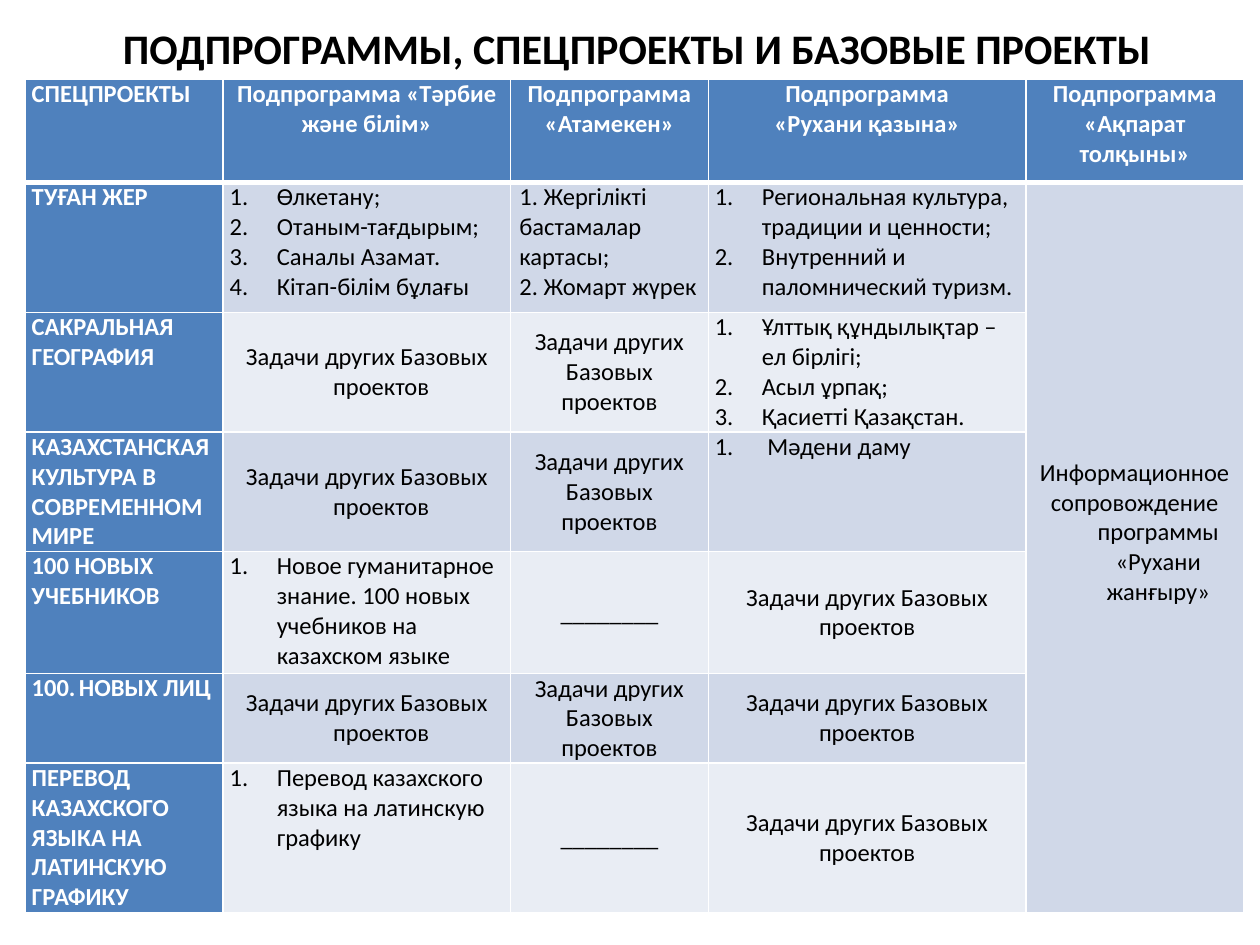
from dataclasses import dataclass

from lxml import etree
from pptx import Presentation
from pptx.dml.color import RGBColor
from pptx.enum.text import MSO_ANCHOR, MSO_AUTO_SIZE, PP_ALIGN
from pptx.oxml.ns import qn
from pptx.util import Cm, Pt

LEFT, CENTER = PP_ALIGN.LEFT, PP_ALIGN.CENTER
TOP, MIDDLE = MSO_ANCHOR.TOP, MSO_ANCHOR.MIDDLE
NO_FIT = MSO_AUTO_SIZE.NONE
FONT = "Calibri"
BLUE, WHITE, BLACK = "4F81BD", "FFFFFF", "000000"
BANDS = ("D0D8E8", "E9EDF4")
COLUMN_WIDTHS = (3.99, 5.79, 3.99, 6.4, 4.39)
ROW_HEIGHTS = (2.08, 2.62, 2.41, 2.41, 2.46, 1.8, 3.0)
TITLE = "ПОДПРОГРАММЫ, СПЕЦПРОЕКТЫ И БАЗОВЫЕ ПРОЕКТЫ"


@dataclass(frozen=True)
class Entry:
    lines: tuple[str, ...]
    align: PP_ALIGN = LEFT
    anchor: MSO_ANCHOR = TOP
    indent: float = 0
    hanging: float = 0
    number_from: int = 0
    bottom: float = 0


def plain(*lines: str) -> Entry:
    return Entry(lines)


def heading(*lines: str) -> Entry:
    return Entry(lines, CENTER)


def numbered(*lines: str, start: int = 1) -> Entry:
    return Entry(lines, indent=0.95, hanging=0.95, number_from=start)


def centered(text: str, indent: float = 0) -> Entry:
    return Entry((text,), CENTER, MIDDLE, indent, indent)


OTHER_TASKS = "Задачи других Базовых проектов"
OTHERS = centered(OTHER_TASKS)
OTHERS_HANGING = centered(OTHER_TASKS, 0.58)
NONE = centered("________")
SUPPORT = Entry(
    ("Информационное", "сопровождение программы «Рухани жанғыру»"),
    CENTER, MIDDLE, 0.95, 0.95, bottom=0.6,
)

ROWS = (
    (
        plain("СПЕЦПРОЕКТЫ"),
        heading("Подпрограмма «Тәрбие және білім»"),
        heading("Подпрограмма «Атамекен»"),
        heading("Подпрограмма", "«Рухани қазына»"),
        heading("Подпрограмма «Ақпарат толқыны»"),
    ),
    (
        plain("ТУҒАН ЖЕР"),
        numbered("Өлкетану;", "Отаным-тағдырым;", "Саналы Азамат.", "Кітап-білім бұлағы"),
        Entry(("1. Жергілікті бастамалар картасы;", "2. Жомарт жүрек"), indent=0.05),
        numbered("Региональная культура, традиции и ценности;",
                 "Внутренний и паломнический туризм."),
        SUPPORT,
    ),
    (
        plain("САКРАЛЬНАЯ ГЕОГРАФИЯ"),
        OTHERS_HANGING,
        OTHERS,
        numbered("Ұлттық құндылықтар – ел бірлігі;", "Асыл ұрпақ;", "Қасиетті Қазақстан."),
    ),
    (
        plain("КАЗАХСТАНСКАЯ КУЛЬТУРА В СОВРЕМЕННОМ МИРЕ"),
        OTHERS_HANGING,
        OTHERS,
        numbered(" Мәдени даму"),
    ),
    (
        plain("100 НОВЫХ УЧЕБНИКОВ"),
        numbered("Новое гуманитарное знание. 100 новых учебников на казахском языке"),
        NONE,
        OTHERS,
    ),
    (numbered("НОВЫХ ЛИЦ", start=100), OTHERS_HANGING, OTHERS, OTHERS),
    (
        plain("ПЕРЕВОД КАЗАХСКОГО ЯЗЫКА НА ЛАТИНСКУЮ ГРАФИКУ"),
        numbered("Перевод казахского языка на латинскую графику"),
        NONE,
        OTHERS,
    ),
)


def color(value: str) -> RGBColor:
    return RGBColor.from_string(value)


def add_span(para, text: str, size: float, tint: str, bold: bool) -> None:
    span = para.add_run()
    span.text = text
    span.font.name = FONT
    span.font.size = Pt(size)
    span.font.bold = bold
    span.font.color.rgb = color(tint)


def format_list(para, entry: Entry) -> None:
    properties = para._p.get_or_add_pPr()
    properties.set("marL", str(Cm(entry.indent)))
    properties.set("indent", str(-Cm(entry.hanging)))
    if entry.number_from:
        number = etree.SubElement(properties, qn("a:buAutoNum"), type="arabicPeriod")
        if entry.number_from > 1:
            number.set("startAt", str(entry.number_from))


def draw_borders(cell, row: int) -> None:
    properties = cell._tc.get_or_add_tcPr()
    widths = {"lnL": 1, "lnR": 1, "lnT": 3 if row == 1 else 1, "lnB": 3 if row == 0 else 1}
    for side, width in widths.items():
        line = etree.SubElement(properties, qn(f"a:{side}"), w=str(Pt(width)))
        fill = etree.SubElement(line, qn("a:solidFill"))
        etree.SubElement(fill, qn("a:srgbClr"), val=WHITE)


def fill_cell(cell, entry: Entry, is_heading: bool) -> None:
    cell.margin_left = cell.margin_right = Cm(0.13)
    cell.margin_top = Cm(0)
    cell.margin_bottom = Cm(entry.bottom)
    cell.vertical_anchor = entry.anchor
    frame = cell.text_frame
    for index, text in enumerate(entry.lines):
        para = frame.add_paragraph() if index else frame.paragraphs[0]
        para.alignment = entry.align
        format_list(para, entry)
        add_span(para, text, 14, WHITE if is_heading else BLACK, is_heading)


def add_title(page) -> None:
    title = page.shapes.title
    title.left, title.top = Cm(0.94), Cm(0.33)
    title.width, title.height = Cm(23.8), Cm(1.27)
    frame = title.text_frame
    frame.word_wrap = True
    frame.auto_size = NO_FIT
    frame.vertical_anchor = TOP
    para = frame.paragraphs[0]
    para.alignment = CENTER
    add_span(para, TITLE, 24, BLACK, True)


def add_projects_table(page) -> None:
    table = page.shapes.add_table(
        len(ROW_HEIGHTS), len(COLUMN_WIDTHS), Cm(0.51), Cm(1.6),
        Cm(sum(COLUMN_WIDTHS)), Cm(sum(ROW_HEIGHTS)),
    ).table
    table.first_row = table.horz_banding = False
    for column, width in zip(table.columns, COLUMN_WIDTHS):
        column.width = Cm(width)
    for row, height in zip(table.rows, ROW_HEIGHTS):
        row.height = Cm(height)
    last = len(COLUMN_WIDTHS) - 1
    table.cell(1, last).merge(table.cell(len(ROW_HEIGHTS) - 1, last))
    for row in range(len(ROW_HEIGHTS)):
        for column in range(len(COLUMN_WIDTHS)):
            cell = table.cell(row, column)
            is_heading = row == 0 or column == 0
            band = BANDS[0] if column == last else BANDS[(row - 1) % 2]
            draw_borders(cell, row)
            cell.fill.solid()
            cell.fill.fore_color.rgb = color(BLUE if is_heading else band)
            if column < len(ROWS[row]):
                fill_cell(cell, ROWS[row][column], is_heading)


def main() -> None:
    deck = Presentation()
    deck.slide_width, deck.slide_height = Cm(25.4), Cm(19.05)
    page = deck.slides.add_slide(deck.slide_layouts[5])
    add_projects_table(page)
    add_title(page)
    deck.save("out.pptx")


if __name__ == "__main__":
    main()
